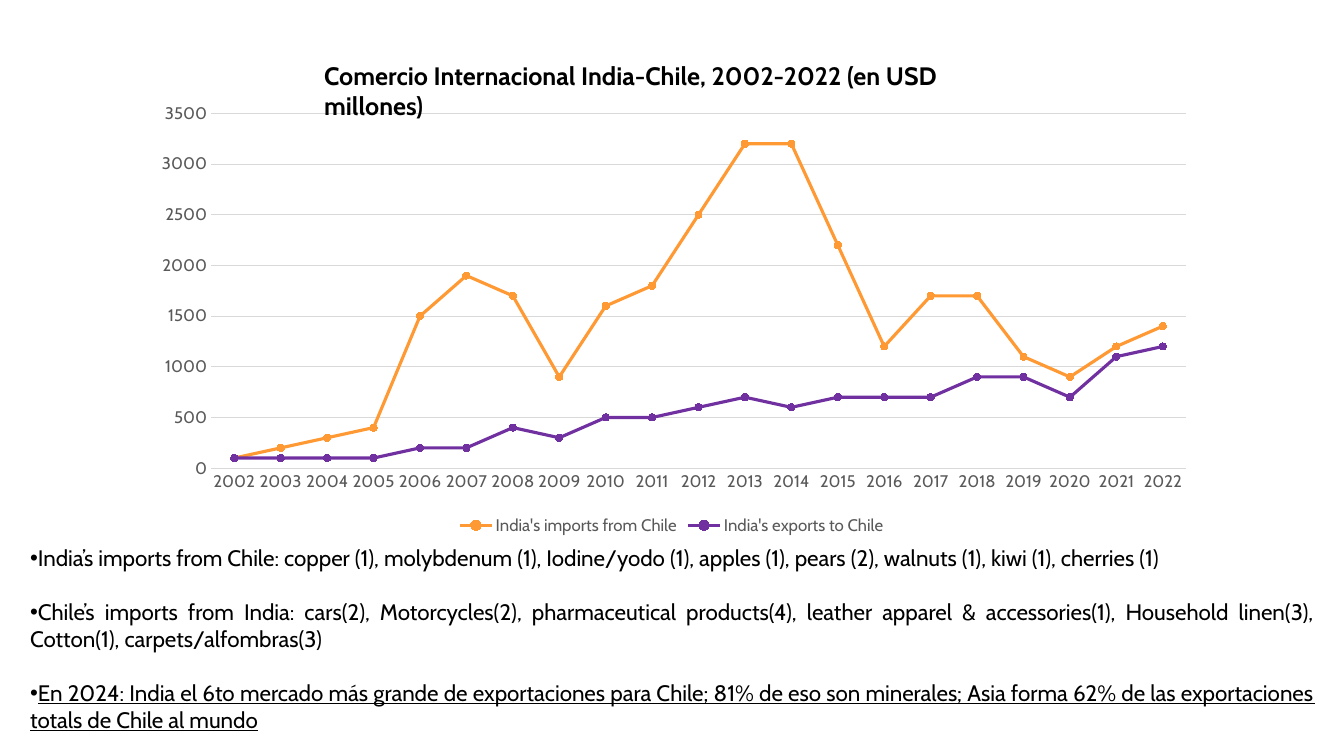
from dataclasses import dataclass

from lxml import etree
from pptx import Presentation
from pptx import util as u
from pptx.chart.data import CategoryChartData
from pptx.dml.color import RGBColor
from pptx.enum import chart as ch
from pptx.enum import text as tx
from pptx.oxml.ns import qn

FONT = "Cabin"
BLACK, GREY, GRID = "000000", "595959", "D9D9D9"


@dataclass
class TradeSeries:
    name: str
    color: str
    values: list[int]


@dataclass
class Line:
    text: str
    size: int = 16
    bold: bool = False
    underline: bool = False
    bullet: bool = False
    gap: float = 0


@dataclass
class TextBlock:
    left: float
    top: float
    width: float
    height: float
    lines: list[Line]


YEARS = [str(year) for year in range(2002, 2023)]
TRADE = [
    TradeSeries("India's imports from Chile", "FF9933",
                [100, 200, 300, 400, 1500, 1900, 1700, 900, 1600, 1800, 2500,
                 3200, 3200, 2200, 1200, 1700, 1700, 1100, 900, 1200, 1400]),
    TradeSeries("India's exports to Chile", "7030A0",
                [100, 100, 100, 100, 200, 200, 400, 300, 500, 500, 600,
                 700, 600, 700, 700, 700, 900, 900, 700, 1100, 1200]),
]
NOTES = TextBlock(0.51, 13.59, 32.87, 5.05, [
    Line("India’s imports from Chile: copper (1), molybdenum (1), Iodine/yodo (1), "
         "apples (1), pears (2), walnuts (1), kiwi (1), cherries (1) ",
         bullet=True, gap=19.4),
    Line("Chile’s imports from India: cars(2), Motorcycles(2), pharmaceutical products(4), "
         "leather apparel & accessories(1), Household linen(3), Cotton(1), "
         "carpets/alfombras(3) ", bullet=True, gap=19.4),
    Line("En 2024: India el 6to mercado más grande de exportaciones para Chile; "
         "81% de eso son minerales; Asia forma 62% de las exportaciones totals "
         "de Chile al mundo", underline=True, bullet=True),
])
TITLE = TextBlock(7.92, 1.4, 18.03, 1.02, [
    Line("Comercio Internacional India-Chile, 2002-2022 (en USD millones)", 18, bold=True),
])


def rgb(value: str) -> RGBColor:
    return RGBColor.from_string(value)


def style_font(font, size: float, color: str) -> None:
    font.name = FONT
    font.size = u.Pt(size)
    font.color.rgb = rgb(color)


def style_line(line, color: str, width: float) -> None:
    line.color.rgb = rgb(color)
    line.width = u.Pt(width)


def add_bullet(para) -> None:
    properties = para._p.get_or_add_pPr()
    properties.set("marL", "0")
    properties.set("indent", "0")
    etree.SubElement(properties, qn("a:buFont")).set("typeface", "Arial")
    etree.SubElement(properties, qn("a:buChar")).set("char", "•")


def add_text(page, block: TextBlock) -> None:
    box = page.shapes.add_textbox(u.Cm(block.left), u.Cm(block.top),
                                  u.Cm(block.width), u.Cm(block.height))
    frame = box.text_frame
    frame.word_wrap = True
    frame.auto_size = tx.MSO_AUTO_SIZE.SHAPE_TO_FIT_TEXT
    for index, line in enumerate(block.lines):
        para = frame.add_paragraph() if index else frame.paragraphs[0]
        para.space_after = u.Pt(line.gap)
        if line.bullet:
            para.alignment = tx.PP_ALIGN.JUSTIFY
            add_bullet(para)
        span = para.add_run()
        span.text = line.text
        style_font(span.font, line.size, BLACK)
        span.font.bold = line.bold
        span.font.underline = line.underline


def place_plot(chart, x: float, y: float, w: float, h: float) -> None:
    """Fix the inner plot area, as fractions of the chart."""
    area = chart._chartSpace.chart.plotArea
    for old in area.findall(qn("c:layout")):
        area.remove(old)
    layout = etree.Element(qn("c:layout"))
    manual = etree.SubElement(layout, qn("c:manualLayout"))
    settings = {"layoutTarget": "inner", "xMode": "edge", "yMode": "edge",
                "x": x, "y": y, "w": w, "h": h}
    for tag, value in settings.items():
        etree.SubElement(manual, qn(f"c:{tag}")).set("val", str(value))
    area.insert(0, layout)


def add_trade_chart(page) -> None:
    data = CategoryChartData()
    data.categories = YEARS
    for trade in TRADE:
        data.add_series(trade.name, trade.values)
    chart = page.shapes.add_chart(ch.XL_CHART_TYPE.LINE_MARKERS, u.Cm(3.43), u.Cm(2.41),
                                  u.Cm(27), u.Cm(11.18), data).chart
    style_font(chart.font, 10, BLACK)
    chart.has_title = False
    place_plot(chart, 0.07, 0.04, 0.91, 0.8)

    # Axes
    years, amounts = chart.category_axis, chart.value_axis
    for axis in (years, amounts):
        axis.major_tick_mark = axis.minor_tick_mark = ch.XL_TICK_MARK.NONE
        style_font(axis.tick_labels.font, 12, GREY)
    style_line(years.format.line, GRID, 0.75)
    amounts.format.line.fill.background()
    amounts.minimum_scale, amounts.maximum_scale, amounts.major_unit = 0, 3500, 500
    style_line(amounts.major_gridlines.format.line, GRID, 0.75)

    # Legend
    chart.has_legend = True
    chart.legend.position = ch.XL_LEGEND_POSITION.BOTTOM
    chart.legend.include_in_layout = False
    style_font(chart.legend.font, 12, GREY)

    # Series
    plot = chart.plots[0]
    plot.vary_by_categories = False
    for series, trade in zip(plot.series, TRADE):
        series.smooth = False
        style_line(series.format.line, trade.color, 2.25)
        marker = series.marker
        marker.style, marker.size = ch.XL_MARKER_STYLE.CIRCLE, 5
        marker.format.fill.solid()
        marker.format.fill.fore_color.rgb = rgb(trade.color)
        style_line(marker.format.line, trade.color, 0.75)


def main() -> None:
    deck = Presentation()
    deck.slide_width, deck.slide_height = u.Cm(33.87), u.Cm(19.05)
    page = deck.slides.add_slide(deck.slide_layouts[6])
    add_trade_chart(page)
    add_text(page, NOTES)
    add_text(page, TITLE)
    deck.save("out.pptx")


if __name__ == "__main__":
    main()
